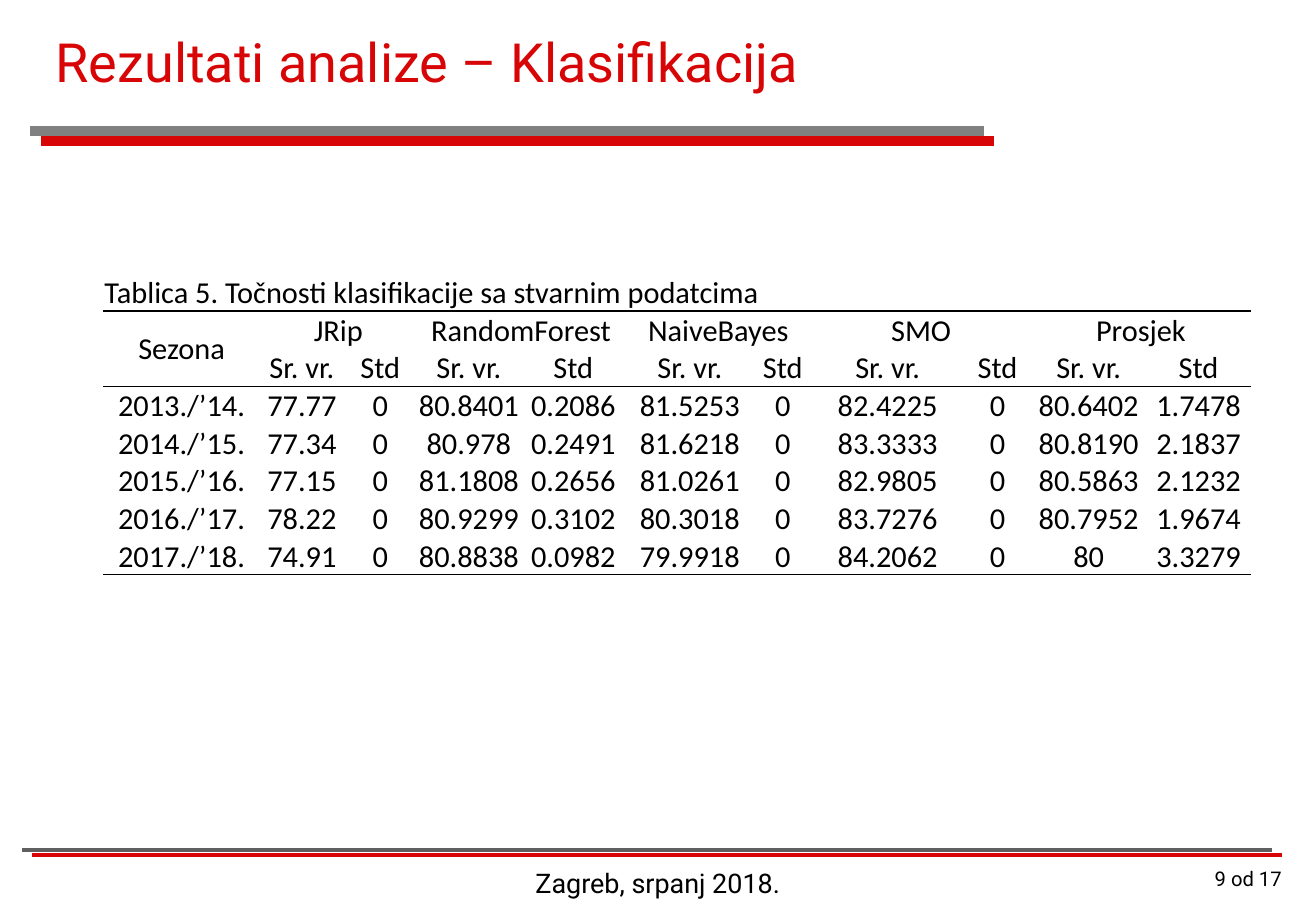
from dataclasses import dataclass

from lxml import etree
from pptx import Presentation
from pptx import util as u
from pptx.dml.color import RGBColor
from pptx.enum import shapes, text
from pptx.oxml import ns

RED = RGBColor(0xD7, 0x05, 0x05)
GREY = RGBColor(0x80, 0x80, 0x80)
DARK_GREY = RGBColor(0x5F, 0x5F, 0x5F)
BLACK = RGBColor(0, 0, 0)
ALIGN = text.PP_ALIGN
MIDDLE = text.MSO_ANCHOR.MIDDLE
TOP = text.MSO_ANCHOR.TOP


@dataclass
class Bar:
    right: float
    left: float
    y: float
    weight: float
    color: RGBColor
    shadow_distance: float
    shadow_degrees: int


@dataclass
class Label:
    words: str
    left: float
    top: float
    width: float
    height: float
    size: int
    color: RGBColor
    align: ALIGN
    anchor: text.MSO_ANCHOR


BARS = [
    Bar(583.2, 18, 77.8, 6, GREY, 8.5, 45),
    Bar(753.8, 13, 504, 2.25, DARK_GREY, 6.7, 27),
]
LABELS = [
    Label("Rezultati analize – Klasifikacija", 25.9, 0, 514, 72, 32, RED, ALIGN.LEFT, MIDDLE),
    Label("Zagreb, srpanj 2018.", 288, 509.8, 203.8, 30.2, 16, BLACK, ALIGN.CENTER, TOP),
    Label("9 od 17", 604, 509.8, 162.8, 30.2, 12, BLACK, ALIGN.RIGHT, TOP),
]

CAPTION = "Tablica 5. Točnosti klasifikacije sa stvarnim podatcima"
CLASSIFIERS = ["JRip", "RandomForest", "NaiveBayes", "SMO", "Prosjek"]
SEASONS = [
    "2013./’14. 77.77 0 80.8401 0.2086 81.5253 0 82.4225 0 80.6402 1.7478",
    "2014./’15. 77.34 0 80.978 0.2491 81.6218 0 83.3333 0 80.8190 2.1837",
    "2015./’16. 77.15 0 81.1808 0.2656 81.0261 0 82.9805 0 80.5863 2.1232",
    "2016./’17. 78.22 0 80.9299 0.3102 80.3018 0 83.7276 0 80.7952 1.9674",
    "2017./’18. 74.91 0 80.8838 0.0982 79.9918 0 84.2062 0 80 3.3279",
]
COLUMN_WIDTHS = [92.9, 49.7, 43.2, 61.9, 61.9, 76.3, 33.8, 90.7, 39.6, 68.4, 61.9]
ROW_HEIGHT = 22.3
RULED_ROWS = {0, 2, 7}  # rows with a line below
CELL_FORMAT = {
    "vertical_anchor": MIDDLE,
    "margin_left": u.Pt(0.72),
    "margin_right": u.Pt(0.72),
    "margin_top": u.Pt(0.72),
    "margin_bottom": u.Pt(0),
}


def apply_format(target: object, values: dict) -> None:
    for name, value in values.items():
        setattr(target, name, value)


def add_child(parent, tag: str, **attributes: str):
    child = etree.SubElement(parent, ns.qn(tag))
    for name, value in attributes.items():
        child.set(name, value)
    return child


def write(para, words: str, font_name: str, size: int, color: RGBColor, align: ALIGN) -> None:
    para.alignment = align
    span = para.add_run()
    span.text = words
    apply_format(span.font, {"name": font_name, "size": u.Pt(size)})
    span.font.color.rgb = color


def draw_bar(page, bar: Bar) -> None:
    y = u.Pt(bar.y)
    line = page.shapes.add_connector(
        shapes.MSO_CONNECTOR.STRAIGHT, u.Pt(bar.right), y, u.Pt(bar.left), y)
    line.line.width = u.Pt(bar.weight)
    line.line.color.rgb = bar.color
    effects = add_child(line._element.spPr, "a:effectLst")
    shadow = add_child(effects, "a:outerShdw", dist=str(u.Pt(bar.shadow_distance)),
                       dir=str(bar.shadow_degrees * 60000), algn="ctr", rotWithShape="0")
    add_child(shadow, "a:srgbClr", val=str(RED))


def draw_label(page, label: Label) -> None:
    box = page.shapes.add_textbox(
        *(u.Pt(n) for n in (label.left, label.top, label.width, label.height)))
    apply_format(box.text_frame, {"word_wrap": True, "vertical_anchor": label.anchor})
    write(box.text_frame.paragraphs[0], label.words, "Roboto", label.size, label.color, label.align)


def set_borders(cell, above: bool, below: bool) -> None:
    properties = cell._tc.get_or_add_tcPr()
    sides = {"a:lnL": False, "a:lnR": False, "a:lnT": above, "a:lnB": below}
    for position, (tag, ruled) in enumerate(sides.items()):
        border = etree.Element(ns.qn(tag))
        properties.insert(position, border)
        if ruled:
            border.set("w", str(u.Pt(1)))
            add_child(add_child(border, "a:solidFill"), "a:srgbClr", val=str(BLACK))
        else:
            add_child(border, "a:noFill")


def draw_results(page) -> None:
    columns = len(COLUMN_WIDTHS)
    rows = [
        [CAPTION] + [""] * (columns - 1),
        ["Sezona"] + [part for name in CLASSIFIERS for part in (name, "")],
        [""] + ["Sr. vr.", "Std"] * len(CLASSIFIERS),
        *(season.split() for season in SEASONS),
    ]
    table = page.shapes.add_table(
        len(rows), columns, u.Pt(61.2), u.Pt(162),
        u.Pt(sum(COLUMN_WIDTHS)), u.Pt(ROW_HEIGHT * len(rows))).table
    apply_format(table, {"first_row": False, "horz_banding": False})
    for column, width in zip(table.columns, COLUMN_WIDTHS):
        column.width = u.Pt(width)
    for row in table.rows:
        row.height = u.Pt(ROW_HEIGHT)

    # Merged headings
    table.cell(0, 0).merge(table.cell(0, columns - 1))
    table.cell(1, 0).merge(table.cell(2, 0))
    for first in range(1, columns, 2):
        table.cell(1, first).merge(table.cell(1, first + 1))

    # Cell text and rules
    for r, row in enumerate(rows):
        for c, words in enumerate(row):
            cell = table.cell(r, c)
            apply_format(cell, CELL_FORMAT)
            cell.fill.background()
            last_row = r + cell.span_height - 1 if cell.is_merge_origin else r
            set_borders(cell, r - 1 in RULED_ROWS, last_row in RULED_ROWS)
            if words:
                align = ALIGN.LEFT if r == 0 else ALIGN.CENTER
                write(cell.text_frame.paragraphs[0], words, "Calibri", 18, BLACK, align)


def main() -> None:
    deck = Presentation()
    apply_format(deck, {"slide_width": u.Pt(780), "slide_height": u.Pt(540)})
    page = deck.slides.add_slide(deck.slide_layouts[6])
    for bar in BARS:
        draw_bar(page, bar)
    for label in LABELS:
        draw_label(page, label)
    draw_results(page)
    deck.save("out.pptx")


if __name__ == "__main__":
    main()
